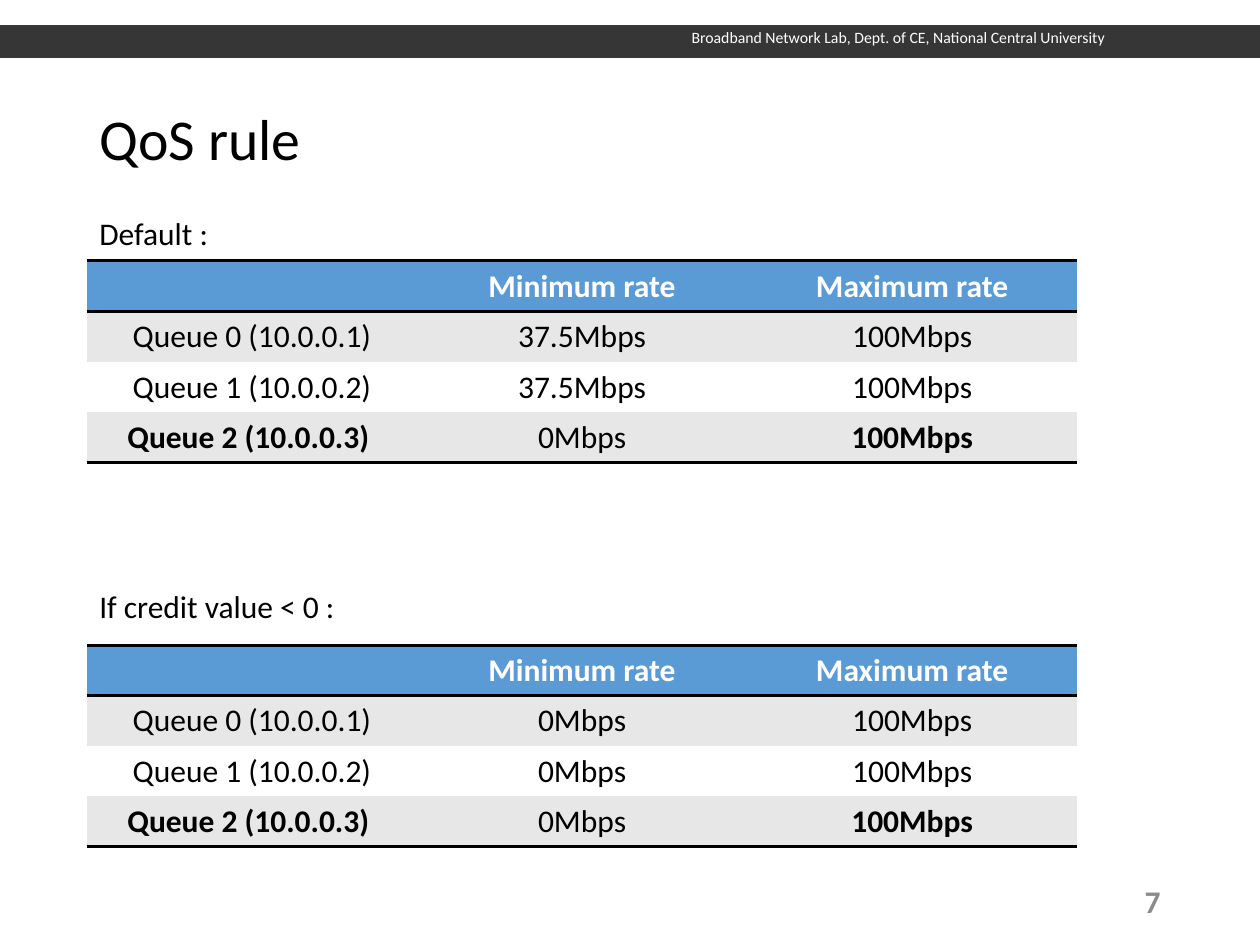
"""Build the QoS rule slide with its two queue rate tables."""
from dataclasses import dataclass

from lxml.etree import SubElement
from pptx import Presentation
from pptx.dml.color import RGBColor
from pptx.enum.shapes import MSO_SHAPE as Shape
from pptx.enum.text import MSO_ANCHOR as Anchor, PP_ALIGN as Align
from pptx.oxml.ns import qn
from pptx.util import Inches, Pt


@dataclass(frozen=True)
class Theme:
    font: str = "Calibri"
    black: str = "000000"
    white: str = "FFFFFF"
    bar: str = "363636"
    header: str = "5B9BD5"
    band: str = "E7E7E7"
    number: str = "8C8C8C"
    title_size: int = 33
    body_size: int = 18
    small_size: int = 9
    rule_width: int = 2
    table_style: str = "{2D5ABB26-0587-4C30-8999-92F81FD0307C}"


THEME = Theme()
LAB = "Broadband Network Lab, Dept. of CE, National Central University"
TITLE = "QoS rule"
PAGE = "7"
HEADER = ("", "Minimum rate", "Maximum rate")
QUEUES = ("Queue 0 (10.0.0.1)", "Queue 1 (10.0.0.2)", "Queue 2 (10.0.0.3) ")
MAXIMUM = "100Mbps"
SECTIONS = (
    {"label": "Default :", "label_top": 1.65, "label_width": 1.08,
     "table_top": 2.07, "minimums": ("37.5Mbps", "37.5Mbps", "0Mbps")},
    {"label": "If credit value < 0 :", "label_top": 4.61, "label_width": 2.1,
     "table_top": 5.12, "minimums": ("0Mbps", "0Mbps", "0Mbps")},
)
WIDTH, HEIGHT = 10, 7.5
MARGIN = 0.69
CONTENT_WIDTH = WIDTH - 2 * MARGIN
COLUMN_WIDTH, ROW_HEIGHT = 2.62, 0.4


def box(left, top, width, height):
    return [Inches(value) for value in (left, top, width, height)]


def style(text_frame, size, color, bold=False, align=Align.LEFT):
    for paragraph in text_frame.paragraphs:
        paragraph.alignment = align
        font = paragraph.font
        font.name, font.size, font.bold = THEME.font, Pt(size), bold
        for run in paragraph.runs:
            run.font.name, run.font.size, run.font.bold = THEME.font, Pt(size), bold
            run.font.color.rgb = RGBColor.from_string(color)


def add_text(slide, text, place, size, color, wrap=False, anchor=Anchor.TOP, **options):
    text_frame = slide.shapes.add_textbox(*box(*place)).text_frame
    text_frame.text = text
    text_frame.word_wrap = wrap
    text_frame.vertical_anchor = anchor
    style(text_frame, size, color, **options)


def add_rule(cell, side):
    properties = cell._tc.get_or_add_tcPr()
    line = SubElement(properties, qn(f"a:ln{side}"), w=str(Pt(THEME.rule_width)))
    fill = SubElement(line, qn("a:solidFill"))
    SubElement(fill, qn("a:srgbClr"), val=THEME.black)


def add_rates(slide, top, minimums):
    rows = [HEADER, *((queue, rate, MAXIMUM) for queue, rate in zip(QUEUES, minimums))]
    last = len(rows) - 1
    size = (COLUMN_WIDTH * len(HEADER), ROW_HEIGHT * len(rows))
    frame = slide.shapes.add_table(len(rows), len(HEADER), *box(MARGIN, top, *size))
    table = frame.table
    table._tbl.tblPr.find(qn("a:tableStyleId")).text = THEME.table_style
    for row, values in enumerate(rows):
        for column, value in enumerate(values):
            cell = table.cell(row, column)
            cell.text = value
            if row == 0:
                add_rule(cell, "T")
            if row in (0, last):
                add_rule(cell, "B")
            fill = THEME.header if row == 0 else THEME.band if row % 2 else THEME.white
            cell.fill.solid()
            cell.fill.fore_color.rgb = RGBColor.from_string(fill)
            bold = row == 0 or (row == last and column != 1)
            color = THEME.white if row == 0 else THEME.black
            style(cell.text_frame, THEME.body_size, color, bold, Align.CENTER)


def main():
    presentation = Presentation()
    presentation.slide_width, presentation.slide_height = Inches(WIDTH), Inches(HEIGHT)
    slide = presentation.slides.add_slide(presentation.slide_layouts[5])

    bar = slide.shapes.add_shape(Shape.RECTANGLE, *box(0, 0.2, WIDTH, 0.26))
    bar.shadow.inherit = False
    bar.fill.solid()
    bar.fill.fore_color.rgb = RGBColor.from_string(THEME.bar)
    bar.line.fill.background()
    add_text(slide, LAB, (5.39, 0.17, 3.52, 0.25), THEME.small_size, THEME.white)

    title = slide.shapes.title
    title.left, title.top, title.width, title.height = box(MARGIN, 0.4, CONTENT_WIDTH, 1.45)
    title.text_frame.text = TITLE
    title.text_frame.vertical_anchor = Anchor.MIDDLE
    title.text_frame.paragraphs[0].line_spacing = 0.9
    style(title.text_frame, THEME.title_size, THEME.black)

    for section in SECTIONS:
        add_rates(slide, section["table_top"], section["minimums"])
        place = (MARGIN, section["label_top"], section["label_width"], 0.4)
        add_text(slide, section["label"], place, THEME.body_size, THEME.black)

    add_text(slide, PAGE, (WIDTH - MARGIN - 2.25, 6.95, 2.25, 0.4), THEME.body_size,
             THEME.number, wrap=True, anchor=Anchor.MIDDLE, bold=True, align=Align.RIGHT)
    presentation.save("out.pptx")


if __name__ == "__main__":
    main()
